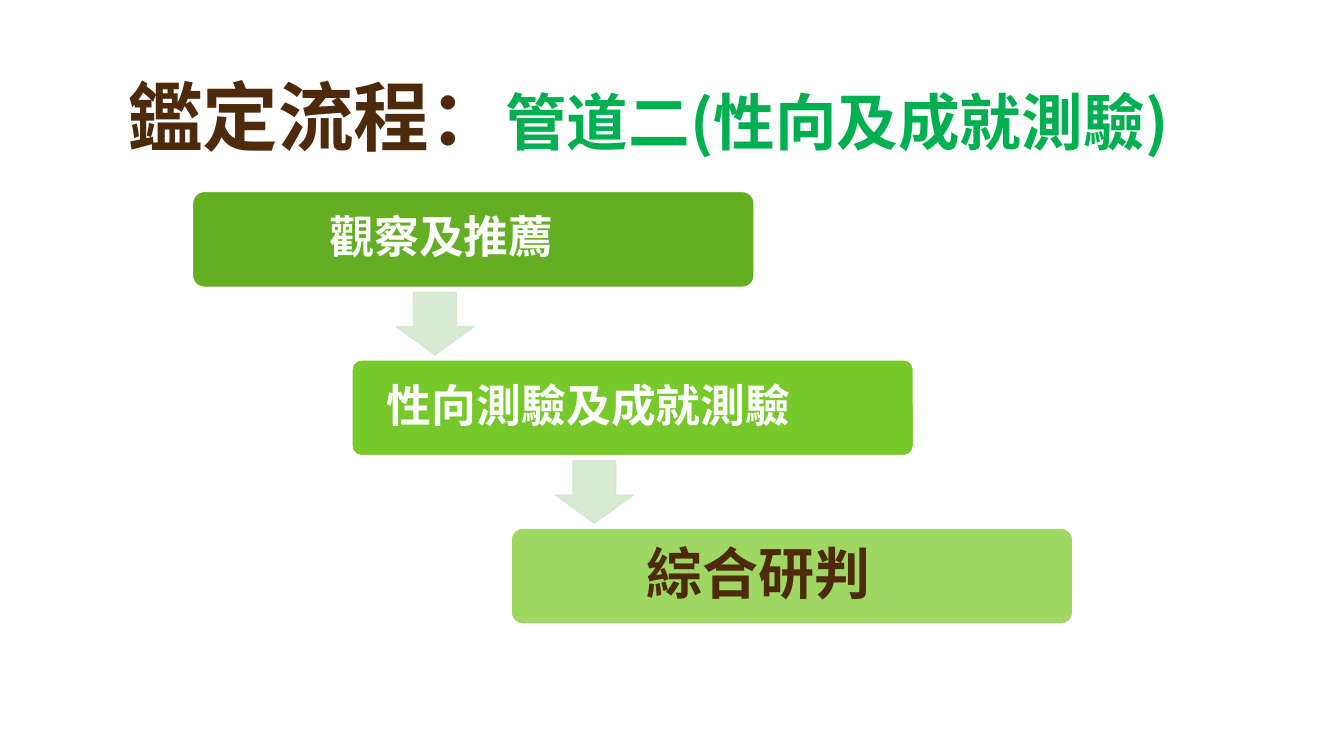
import pptx
import pptx.dml.color
import pptx.enum.shapes
import pptx.enum.text
import pptx.util
from lxml import etree

FONT = "Noto Sans CJK SC"
BROWN, GREEN, WHITE, PALE = "4D2A0B", "00B050", "FFFFFF", "D4E8CD"
STEP_X, STEP_Y = 1.58, 1.67
BOX_W, BOX_H = 5.57, 0.95
ARROW_W, ARROW_H = 0.77, 0.62
STAGES = [
    # text, size, text colour, fill, right inset, corner
    ("觀察及推薦", 32, WHITE, "63AE22", 0.77, 0.12),
    ("性向測驗及成就測驗", 32, WHITE, "76C82B", 1.01, 0.1),
    ("綜合研判", 40, BROWN, "9ED762", 0.8, 0.12),
]
SHAPE = pptx.enum.shapes.MSO_SHAPE
ANCHOR = pptx.enum.text.MSO_ANCHOR
ALIGN = pptx.enum.text.PP_ALIGN
inch = pptx.util.Inches


def rgb(code):
    return pptx.dml.color.RGBColor.from_string(code)


def write(para, text, size, color):
    """Add a bold run, with the font set for Latin and East Asian text."""
    run = para.add_run()
    run.text = text
    font = run.font
    font.size, font.bold, font.name = pptx.util.Pt(size), True, FONT
    font.color.rgb = rgb(color)
    east = etree.SubElement(run._r.get_or_add_rPr(), pptx.oxml.ns.qn("a:ea"))
    east.set("typeface", FONT)


def add_shape(slide, kind, place, fill, line):
    shape = slide.shapes.add_shape(kind, *map(inch, place))
    shape.shadow.inherit = False
    shape.fill.solid()
    shape.fill.fore_color.rgb = rgb(fill)
    shape.line.color.rgb = rgb(line)
    shape.line.width = pptx.util.Pt(1)
    return shape


def fade(shape, share):
    for color in shape._element.spPr.iter(pptx.oxml.ns.qn("a:srgbClr")):
        alpha = etree.SubElement(color, pptx.oxml.ns.qn("a:alpha"))
        alpha.set("val", str(share * 1000))


def add_title(slide):
    title = slide.shapes.title
    title.left, title.top, title.width, title.height = map(
        inch, (1.16, 0.33, 11.4, 1.33))
    frame = title.text_frame
    frame.word_wrap = True
    frame.auto_size = pptx.enum.text.MSO_AUTO_SIZE.NONE
    frame.vertical_anchor = ANCHOR.BOTTOM
    para = frame.paragraphs[0]
    para.alignment, para.line_spacing = ALIGN.LEFT, 0.9
    write(para, "鑑定流程：", 54, BROWN)
    write(para, "管道二(性向及成就測驗)", 44, GREEN)


def add_stage(slide, index, text, size, color, fill, inset, corner):
    place = (1.91 + index * STEP_X, 1.9 + index * STEP_Y, BOX_W, BOX_H)
    box = add_shape(slide, SHAPE.ROUNDED_RECTANGLE, place, fill, WHITE)
    box.adjustments[0] = corner
    frame = box.text_frame
    frame.word_wrap = True
    frame.vertical_anchor = ANCHOR.MIDDLE
    frame.margin_left = frame.margin_top = frame.margin_bottom = inch(0.14)
    frame.margin_right = inch(inset)
    para = frame.paragraphs[0]
    para.alignment, para.line_spacing = ALIGN.CENTER, 0.9
    write(para, text, size, color)


def add_arrow(slide, index):
    place = (3.93 + index * STEP_X, 2.9 + index * STEP_Y, ARROW_W, ARROW_H)
    arrow = add_shape(slide, SHAPE.DOWN_ARROW, place, PALE, PALE)
    arrow.adjustments[0] = 0.55
    arrow.adjustments[1] = 0.45
    fade(arrow, 90)


def main():
    deck = pptx.Presentation()
    deck.slide_width, deck.slide_height = inch(13.33), inch(7.5)
    slide = deck.slides.add_slide(deck.slide_layouts[5])
    add_title(slide)
    for index, stage in enumerate(STAGES):
        add_stage(slide, index, *stage)
    for index in range(len(STAGES) - 1):
        add_arrow(slide, index)
    deck.save("out.pptx")


if __name__ == "__main__":
    main()
